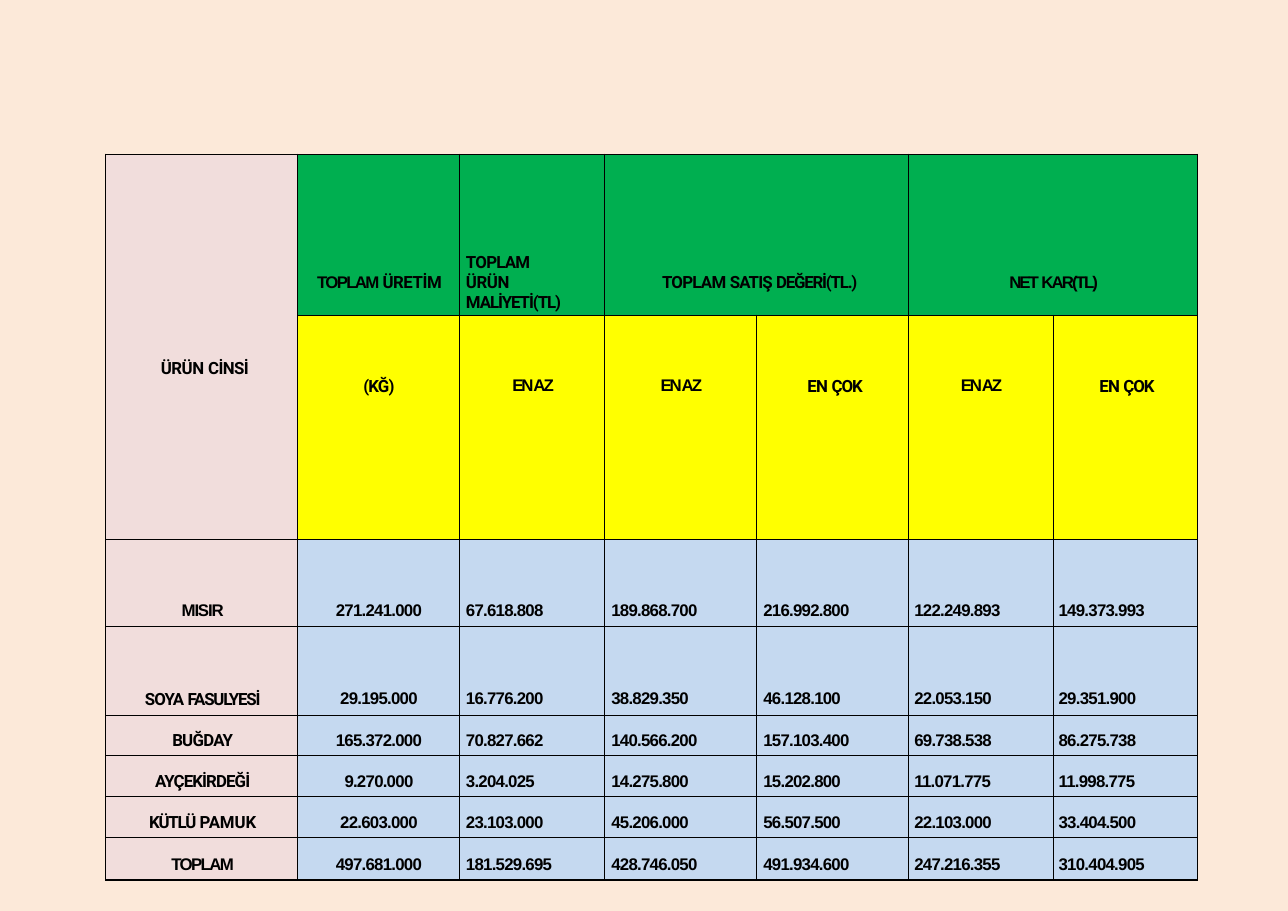
import lxml.etree
import pptx
import pptx.dml.color
import pptx.enum.text
import pptx.oxml.ns
import pptx.util

ALIGN = pptx.enum.text.PP_ALIGN
ANCHOR = pptx.enum.text.MSO_ANCHOR
INCH = pptx.util.Inches

SLIDE_SIZE = (11.69, 8.27)
TABLE_ORIGIN = (0.96, 1.4)
COLUMN_WIDTHS = (1.74, 1.47, 1.32, 1.38, 1.38, 1.31, 1.31)
ROW_HEIGHTS = (1.46, 2.04, 0.79, 0.8, 0.37, 0.37, 0.37, 0.39)

BACKGROUND, PINK, GREEN = "FCE9D9", "F1DDDC", "00AF50"
YELLOW, BLUE, BLACK = "FFFF00", "C5D9F0", "000000"

GROUP_HEADERS = [
    (1, 1, [("TOPLAM ", "Arial", -1.1), ("ÜRETİM", "Roboto", -0.3)], {"margin_left": 0.02, "margin_top": 1.08}),
    (2, 1, [("TOPLAM ", "Roboto", -0.5), ("ÜRÜN ", "Roboto", -0.3), ("MALİYETİ(TL)", "Roboto", -0.7)],
     {"margin_left": 0.06, "margin_top": 0.9, "margin_right": 0.35}),
    (3, 2, [("TOPLAM ", "Roboto", -0.5), ("SATIŞ ", "Roboto", -0.6), ("DEĞERİ(TL.)", "Roboto", -0.8)],
     {"margin_left": 0.52, "margin_top": 1.08}),
    (5, 2, [("NET ", "Arial", -1.4), ("KAR(TL)", "Arial", -1.3)], {"margin_left": 0.01, "margin_top": 1.08}),
]
LEAST = [("EN AZ", "Arial", -1.4)]
MOST = [("EN ", "Roboto", -0.5), ("ÇOK", "Roboto", -0.7)]
UNIT_HEADERS = [
    ([("(KĞ)", "Roboto", -0.6)], 0.01, ALIGN.CENTER),
    (LEAST, 0.02, ALIGN.CENTER),
    (LEAST, 0.01, ALIGN.CENTER),
    (MOST, 0.46, ALIGN.LEFT),
    (LEAST, 0.01, ALIGN.CENTER),
    (MOST, 0.42, ALIGN.LEFT),
]
PRODUCTS = [
    ([("MISIR", "Arial", -0.8)], 0.56,
     "271.241.000 67.618.808 189.868.700 216.992.800 122.249.893 149.373.993"),
    ([("SOYA ", "Roboto", -0.6), ("FASULYESİ", "Roboto", -0.8)], 0.57,
     "29.195.000 16.776.200 38.829.350 46.128.100 22.053.150 29.351.900"),
    ([("BUĞDAY", "Roboto", -0.5)], 0.15,
     "165.372.000 70.827.662 140.566.200 157.103.400 69.738.538 86.275.738"),
    ([("AYÇEKİRDEĞİ", "Roboto", -0.6)], 0.15,
     "9.270.000 3.204.025 14.275.800 15.202.800 11.071.775 11.998.775"),
    ([("KÜTLÜ ", "Roboto", -0.8), ("PAMUK", "Roboto", -0.1)], 0.15,
     "22.603.000 23.103.000 45.206.000 56.507.500 22.103.000 33.404.500"),
    ([("TOPLAM", "Arial", -1.1)], 0.17,
     "497.681.000 181.529.695 428.746.050 491.934.600 247.216.355 310.404.905"),
]
VALUE_INDENTS = (0.01, 0.06, 0.06, 0.06, 0.05, 0.05)


def color(hex_string):
    return pptx.dml.color.RGBColor.from_string(hex_string)


def set_values(target, values):
    for name, value in values.items():
        setattr(target, name, value)


def paint(fill, hex_string):
    fill.solid()
    fill.fore_color.rgb = color(hex_string)


def add_borders(cell, widths):
    properties = cell._tc.get_or_add_tcPr()
    for side, width in widths.items():
        line = lxml.etree.SubElement(properties, pptx.oxml.ns.qn(f"a:ln{side}"), w=str(pptx.util.Pt(width)))
        fill = lxml.etree.SubElement(line, pptx.oxml.ns.qn("a:solidFill"))
        lxml.etree.SubElement(fill, pptx.oxml.ns.qn("a:srgbClr"), val=BLACK)


def write_cell(cell, runs, margins, alignment=ALIGN.CENTER, anchor=ANCHOR.TOP):
    sides = dict.fromkeys(("margin_left", "margin_top", "margin_right", "margin_bottom"), 0) | margins
    set_values(cell, {name: INCH(value) for name, value in sides.items()})
    cell.vertical_anchor = anchor
    paragraph = cell.text_frame.paragraphs[0]
    paragraph.alignment = alignment
    for text, font_name, spacing in runs:
        run = paragraph.add_run()
        run.text = text
        set_values(run.font, {"name": font_name, "size": pptx.util.Pt(11), "bold": True})
        run.font.color.rgb = color(BLACK)
        run.font._element.set("spc", str(round(spacing * 100)))


def cell_color(row, column):
    if column == 0:
        return PINK
    return (GREEN, YELLOW)[row] if row < 2 else BLUE


def add_grid(slide):
    left, top = TABLE_ORIGIN
    rows, columns = len(ROW_HEIGHTS), len(COLUMN_WIDTHS)
    frame = slide.shapes.add_table(rows, columns, INCH(left), INCH(top),
                                   INCH(sum(COLUMN_WIDTHS)), INCH(sum(ROW_HEIGHTS)))
    table = frame.table
    set_values(table, {"first_row": False, "horz_banding": False})
    for column, width in zip(table.columns, COLUMN_WIDTHS):
        column.width = INCH(width)
    for row, height in zip(table.rows, ROW_HEIGHTS):
        row.height = INCH(height)
    for row in range(rows):
        for column in range(columns):
            cell = table.cell(row, column)
            outer = {"L": column == 0, "R": column == columns - 1, "T": row == 0, "B": row == rows - 1}
            add_borders(cell, {side: 1 if edge else 0.5 for side, edge in outer.items()})
            paint(cell.fill, cell_color(row, column))
    return table


def write_headers(table):
    corner = table.cell(0, 0)
    corner.merge(table.cell(1, 0))
    write_cell(corner, [("ÜRÜN ", "Roboto", -0.3), ("CİNSİ", "Roboto", -0.4)],
               {"margin_left": 0.5, "margin_top": 0.4}, ALIGN.LEFT, ANCHOR.MIDDLE)
    for column, span, runs, margins in GROUP_HEADERS:
        cell = table.cell(0, column)
        if span > 1:
            cell.merge(table.cell(0, column + span - 1))
        alignment = ALIGN.LEFT if margins["margin_left"] > 0.05 else ALIGN.CENTER
        write_cell(cell, runs, margins, alignment)
    for column, (runs, indent, alignment) in enumerate(UNIT_HEADERS, 1):
        write_cell(table.cell(1, column), runs, {"margin_left": indent, "margin_top": 0.56}, alignment)


def write_products(table):
    for row, (label, top, values) in enumerate(PRODUCTS, 2):
        write_cell(table.cell(row, 0), label, {"margin_left": 0.02, "margin_top": top})
        for column, (value, indent) in enumerate(zip(values.split(), VALUE_INDENTS), 1):
            alignment = ALIGN.CENTER if column == 1 else ALIGN.LEFT
            write_cell(table.cell(row, column), [(value, "Arial", -0.5)],
                       {"margin_left": indent, "margin_top": top}, alignment)


def main():
    presentation = pptx.Presentation()
    width, height = SLIDE_SIZE
    set_values(presentation, {"slide_width": INCH(width), "slide_height": INCH(height)})
    slide = presentation.slides.add_slide(presentation.slide_layouts[6])
    paint(slide.background.fill, BACKGROUND)
    table = add_grid(slide)
    write_headers(table)
    write_products(table)
    presentation.save("out.pptx")


if __name__ == "__main__":
    main()
